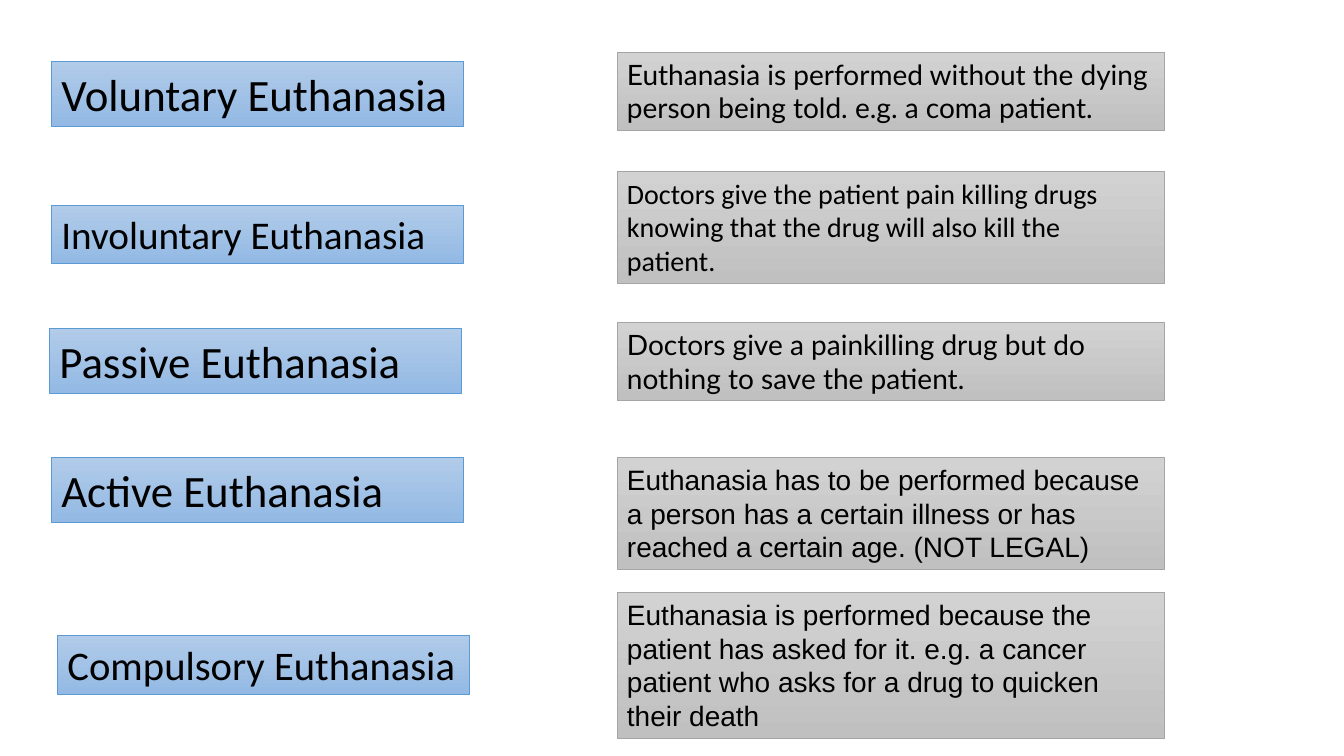
import pptx
import pptx.util
import pptx.dml.color
import pptx.enum.shapes
import pptx.enum.text

Inches = pptx.util.Inches
RGBColor = pptx.dml.color.RGBColor

BLACK = RGBColor(0x00, 0x00, 0x00)
BLUE_TOP = RGBColor(0xB1, 0xCB, 0xE9)
BLUE_BOTTOM = RGBColor(0x93, 0xB9, 0xE4)
BLUE_LINE = RGBColor(0x5B, 0x9B, 0xD5)
GREY_TOP = RGBColor(0xD2, 0xD2, 0xD2)
GREY_BOTTOM = RGBColor(0xC0, 0xC0, 0xC0)
GREY_LINE = RGBColor(0xA5, 0xA5, 0xA5)

BLUE = (BLUE_TOP, BLUE_BOTTOM, BLUE_LINE)
GREY = (GREY_TOP, GREY_BOTTOM, GREY_LINE)

TERM_WIDTH = 4.09
MEANING_LEFT, MEANING_WIDTH, MEANING_SIZE = 6.12, 5.43, 20

# left, top, height, font size, text
TERMS = [
    (0.51, 0.61, 0.64, 32, "Voluntary Euthanasia"),
    (0.51, 2.04, 0.57, 28, "Involuntary Euthanasia"),
    (0.49, 3.26, 0.64, 32, "Passive Euthanasia"),
    (0.51, 4.54, 0.64, 32, "Active Euthanasia"),
    (0.57, 6.3, 0.59, 29, "Compulsory Euthanasia"),
]

# top, height, font, text
MEANINGS = [
    (0.52, 0.77, "Lato",
     "Euthanasia is performed without the dying person being told. "
     "e.g. a coma patient."),
    (1.7, 1.11, "Calibri",
     "Doctors give the patient pain killing drugs knowing that the drug "
     "will also kill the patient."),
    (3.2, 0.77, "Lato",
     "Doctors give a painkilling drug but do nothing to save the patient."),
    (4.54, 1.11, "Arial",
     "Euthanasia has to be performed because a person has a certain illness "
     "or has reached a certain age. (NOT LEGAL)"),
    (5.88, 1.45, "Arial",
     "Euthanasia is performed because the patient has asked for it. e.g. a "
     "cancer patient who asks for a drug to quicken their death"),
]


def paint(box, colours):
    """Give a box a top-to-bottom gradient and a thin outline."""
    top_colour, bottom_colour, line_colour = colours
    box.shadow.inherit = False
    box.fill.gradient()
    box.fill.gradient_angle = 270
    for stop, colour in zip(box.fill.gradient_stops, (top_colour, bottom_colour)):
        stop.color.rgb = colour
    box.line.color.rgb = line_colour
    box.line.width = pptx.util.Pt(0.5)


def add_card(page, left, top, width, height, text, font, size, colours):
    """Add a filled rectangle that holds one left-aligned paragraph."""
    box = page.shapes.add_shape(
        pptx.enum.shapes.MSO_SHAPE.RECTANGLE,
        Inches(left), Inches(top), Inches(width), Inches(height))
    paint(box, colours)
    frame = box.text_frame
    frame.text = text
    frame.word_wrap = True
    frame.auto_size = pptx.enum.text.MSO_AUTO_SIZE.SHAPE_TO_FIT_TEXT
    frame.vertical_anchor = pptx.enum.text.MSO_ANCHOR.TOP
    para = frame.paragraphs[0]
    para.alignment = pptx.enum.text.PP_ALIGN.LEFT
    span = para.runs[0]
    span.font.name = font
    span.font.size = pptx.util.Pt(size)
    span.font.color.rgb = BLACK


def main():
    deck = pptx.Presentation()
    deck.slide_width = Inches(13.33)
    deck.slide_height = Inches(7.5)
    page = deck.slides.add_slide(deck.slide_layouts[6])

    # Terms on the left
    for left, top, height, size, text in TERMS:
        add_card(page, left, top, TERM_WIDTH, height, text, "Calibri", size, BLUE)

    # Meanings on the right
    for top, height, font, text in MEANINGS:
        add_card(page, MEANING_LEFT, top, MEANING_WIDTH, height, text, font,
                 MEANING_SIZE, GREY)

    deck.save("out.pptx")


if __name__ == "__main__":
    main()
